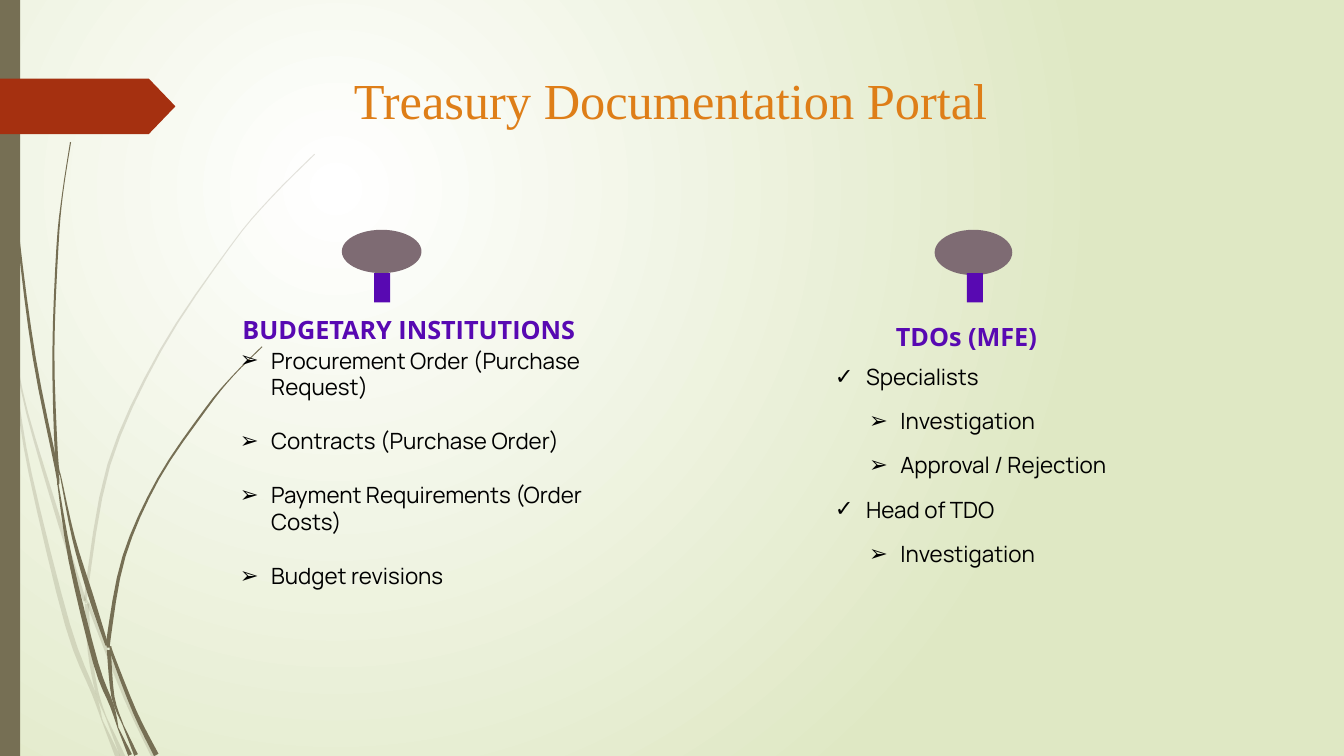
from math import hypot

from lxml import etree
from pptx import Presentation
from pptx.dml.color import RGBColor
from pptx.enum.shapes import MSO_SHAPE
from pptx.enum.text import PP_ALIGN
from pptx.oxml.ns import qn
from pptx.util import Inches, Pt

WHITE = RGBColor(0xFF, 0xFF, 0xFF)
PALE_GREEN = RGBColor(0xDF, 0xE8, 0xC4)
OLIVE = RGBColor(0x76, 0x6F, 0x54)
RUST = RGBColor(0xA5, 0x30, 0x10)
ORANGE = RGBColor(0xDE, 0x7E, 0x18)
MAUVE = RGBColor(0x7E, 0x6B, 0x73)
PURPLE = RGBColor(0x58, 0x09, 0xB2)
BLACK = RGBColor(0, 0, 0)

# Grass blade sections: (x, y, thickness) along each centre line
PALE_BLADES = [
    [(0, 2.9, 0.04), (0.07, 3.22, 0.03), (0.11, 3.5, 0.01)],
    [(0.14, 3.45, 0.01), (0.27, 4.1, 0.02), (0.6, 5.21, 0.04), (0.84, 5.96, 0.03)],
    [(0.88, 5.98, 0.01), (0.91, 6.08, 0.03), (1.25, 6.93, 0.04), (1.53, 7.51, 0.05)],
    [(0.11, 3.5, 0.01), (0.16, 3.85, 0.02), (0.3, 4.7, 0.03), (0.67, 6.2, 0.05),
     (0.93, 6.88, 0.04), (1.01, 7.14, 0.01)],
    [(1.01, 7.14, 0.01), (1.17, 7.51, 0.05)],
    [(3.12, 1.53, 0.01), (2.68, 1.97, 0.01), (2.28, 2.45, 0.01), (1.59, 3.48, 0.02),
     (1.08, 4.61, 0.03), (0.86, 5.84, 0.03), (0.87, 5.96, 0.02)],
    [(0.86, 5.99, 0.04), (0.89, 6.46, 0.04), (0.96, 6.86, 0.03), (1.05, 7.11, 0.01)],
    [(1.05, 7.11, 0.01), (1.22, 7.51, 0.05)],
]
DARK_BLADES = [
    [(0.03, 0, 0.01), (0.04, 0.48, 0.01), (0.07, 1.1, 0.01), (0.18, 2.33, 0.02),
     (0.34, 3.55, 0.03), (0.56, 4.65, 0.03), (0.57, 4.81, 0.01)],
    [(0.57, 4.77, 0.01), (0.7, 5.56, 0.04), (0.95, 6.58, 0.05), (1.11, 7.0, 0.04),
     (1.17, 7.22, 0.01)],
    [(1.17, 7.22, 0.01), (1.29, 7.49, 0.04)],
    [(0.7, 1.41, 0.01), (0.62, 1.93, 0.01), (0.57, 2.45, 0.02), (0.53, 3.49, 0.02),
     (0.56, 4.51, 0.03), (0.6, 4.72, 0.01)],
    [(0.6, 4.72, 0.01), (0.73, 5.34, 0.03), (0.9, 5.91, 0.05), (1.06, 6.4, 0.03)],
    [(1.1, 6.41, 0.01), (1.12, 6.51, 0.03), (1.34, 7.07, 0.04), (1.55, 7.49, 0.05)],
    [(2.6, 3.44, 0.01), (2.31, 3.73, 0.01), (2.04, 4.06, 0.02), (1.57, 4.75, 0.02),
     (1.23, 5.52, 0.03), (1.08, 6.32, 0.04), (1.09, 6.41, 0.03)],
    [(1.08, 6.45, 0.04), (1.12, 6.91, 0.03), (1.22, 7.19, 0.01)],
    [(1.22, 7.19, 0.01), (1.35, 7.49, 0.04)],
]

BUDGETARY = {
    "heading": "BUDGETARY INSTITUTIONS", "heading_top": 0.5,
    "pin": (1.5, 0.79, 0.43),
    "list_at": (0.3, 1.16, 4.25), "gap": 19.3, "line": None,
    "items": [("Procurement Order (Purchase Request)", "➢", 1, 0.5),
              ("Contracts (Purchase Order)", "➢", 1, 0.5),
              ("Payment Requirements (Order Costs)", "➢", 1, 0.5),
              ("Budget revisions", "➢", 1, 0.5)],
}
TREASURY = {
    "heading": "TDOs (MFE)", "heading_top": 0.57,
    "pin": (1.7, 0.77, 0.45),
    "list_at": (0.5, 1.15, 4.29), "gap": 0, "line": 31.6,
    "items": [("Specialists", "✓", 1, 0.52),
              ("Investigation", "➢", 2, 0.86),
              ("Approval / Rejection", "➢", 2, 0.86),
              ("Head of TDO", "✓", 1, 0.52),
              ("Investigation", "➢", 2, 0.86)],
}
TITLE_FONT = {"name": "Times New Roman", "size": Pt(36), "color": ORANGE}
HEADING_FONT = {"name": "Open Sans", "size": Pt(18), "bold": True, "color": PURPLE}
LIST_FONT = {"name": "Manrope", "size": Pt(16), "color": BLACK}


def paint(shape, color):
    shape.shadow.inherit = False
    shape.fill.solid()
    shape.fill.fore_color.rgb = color
    shape.line.fill.background()
    return shape


def add_shape(page, kind, box, color):
    return paint(page.shapes.add_shape(kind, *map(Inches, box)), color)


def add_text_box(page, box, inset=0):
    frame = page.shapes.add_textbox(*map(Inches, box)).text_frame
    frame.word_wrap = True
    for side in ("left", "top", "right", "bottom"):
        setattr(frame, f"margin_{side}", Inches(inset))
    return frame


def add_span(para, text, font_format):
    span = para.add_run()
    span.text = text
    for name, value in font_format.items():
        if name == "color":
            span.font.color.rgb = value
        else:
            setattr(span.font, name, value)


def smooth(points, steps=4):
    """Catmull-Rom curve through the points."""
    padded = [points[0], *points, points[-1]]
    curve = []
    for a, b, c, d in zip(padded, padded[1:], padded[2:], padded[3:]):
        for step in range(steps):
            t = step / steps
            curve.append([
                (2 * q + (r - p) * t + (2 * p - 5 * q + 4 * r - s) * t ** 2
                 + (3 * q - p - 3 * r + s) * t ** 3) / 2
                for p, q, r, s in zip(a, b, c, d)])
    return curve + [list(points[-1])]


def add_blade(page, points, alpha=None):
    curve = smooth(points)
    left, right = [], []
    for index, (x, y, width) in enumerate(curve):
        before, after = curve[max(index - 1, 0)], curve[min(index + 1, len(curve) - 1)]
        dx, dy = after[0] - before[0], after[1] - before[1]
        scale = width / 2 / hypot(dx, dy)
        left.append((Inches(max(x - dy * scale, 0)), Inches(y + dx * scale)))
        right.append((Inches(x + dy * scale), Inches(max(y - dx * scale, 0))))
    outline = left + right[::-1]
    builder = page.shapes.build_freeform(*outline[0])
    builder.add_line_segments(outline[1:], close=True)
    blade = paint(builder.convert_to_shape(), OLIVE)
    if alpha:
        color = blade.element.spPr.find(qn("a:solidFill"))[0]
        etree.SubElement(color, qn("a:alpha"), val=str(alpha * 1000))


def add_backdrop(page):
    # Radial gradient centred in the upper left
    fill = page.background.fill
    fill.gradient()
    for stop, color in zip(fill.gradient_stops, (WHITE, PALE_GREEN)):
        stop.color.rgb = color
    linear = next(page.element.iter(qn("a:lin")))
    gradient = linear.getparent()
    gradient.remove(linear)
    radial = etree.SubElement(gradient, qn("a:path"))
    radial.set("path", "circle")
    etree.SubElement(radial, qn("a:fillToRect"), l="50000", t="50000", r="100000", b="100000")
    # Grass, side bar and arrow tab
    for points in PALE_BLADES:
        add_blade(page, points, alpha=20)
    for points in DARK_BLADES:
        add_blade(page, points)
    add_shape(page, MSO_SHAPE.RECTANGLE, (0, 0, 0.2, 7.5), OLIVE)
    tab = add_shape(page, MSO_SHAPE.PENTAGON, (0, 0.78, 1.74, 0.55), RUST)
    tab.adjustments[0] = 0.48


def add_title(page, box, text):
    frame = add_text_box(page, box, inset=0.05)
    frame.margin_left = Inches(0.72)
    add_span(frame.paragraphs[0], text, TITLE_FONT)


def add_list(page, box, column):
    frame = add_text_box(page, box)
    for index, (text, bullet, level, indent) in enumerate(column["items"]):
        para = frame.add_paragraph() if index else frame.paragraphs[0]
        para.level = level
        if column["line"]:
            para.line_spacing = Pt(column["line"])
        para.space_before = Pt(column["gap"] if index else 0)
        add_span(para, text, LIST_FONT)
        # Hanging bullet
        props = para._p.get_or_add_pPr()
        props.set("marL", str(Inches(indent)))
        props.set("indent", str(Inches(-0.31)))
        etree.SubElement(props, qn("a:buFont"), typeface="Arial")
        etree.SubElement(props, qn("a:buChar"), char=bullet)


def add_column(page, box, column):
    left, top, width, height = box
    # Pin: oval head on a short stem
    pin_left, pin_width, pin_height = column["pin"]
    add_shape(page, MSO_SHAPE.OVAL, (left + pin_left, top, pin_width, pin_height), MAUVE)
    add_shape(page, MSO_SHAPE.RECTANGLE,
              (left + pin_left + 0.32, top + 0.43, 0.16, 0.29), PURPLE)
    # Heading
    frame = add_text_box(page, (left, top + column["heading_top"], width, 0.65))
    para = frame.paragraphs[0]
    para.alignment = PP_ALIGN.CENTER
    para.line_spacing = Pt(45.6)
    add_span(para, column["heading"], HEADING_FONT)
    # Bulleted list
    dx, dy, list_width = column["list_at"]
    add_list(page, (left + dx, top + dy, list_width, height - dy), column)


def main():
    deck = Presentation()
    deck.slide_width, deck.slide_height = Inches(13.33), Inches(7.5)
    page = deck.slides.add_slide(deck.slide_layouts[6])
    add_backdrop(page)
    add_title(page, (2.79, 0.64, 7.66, 0.71), "Treasury Documentation Portal")
    add_column(page, (1.89, 2.28, 4.33, 3.8), BUDGETARY)
    add_column(page, (7.57, 2.28, 4.03, 3.69), TREASURY)
    deck.save("out.pptx")


if __name__ == "__main__":
    main()
